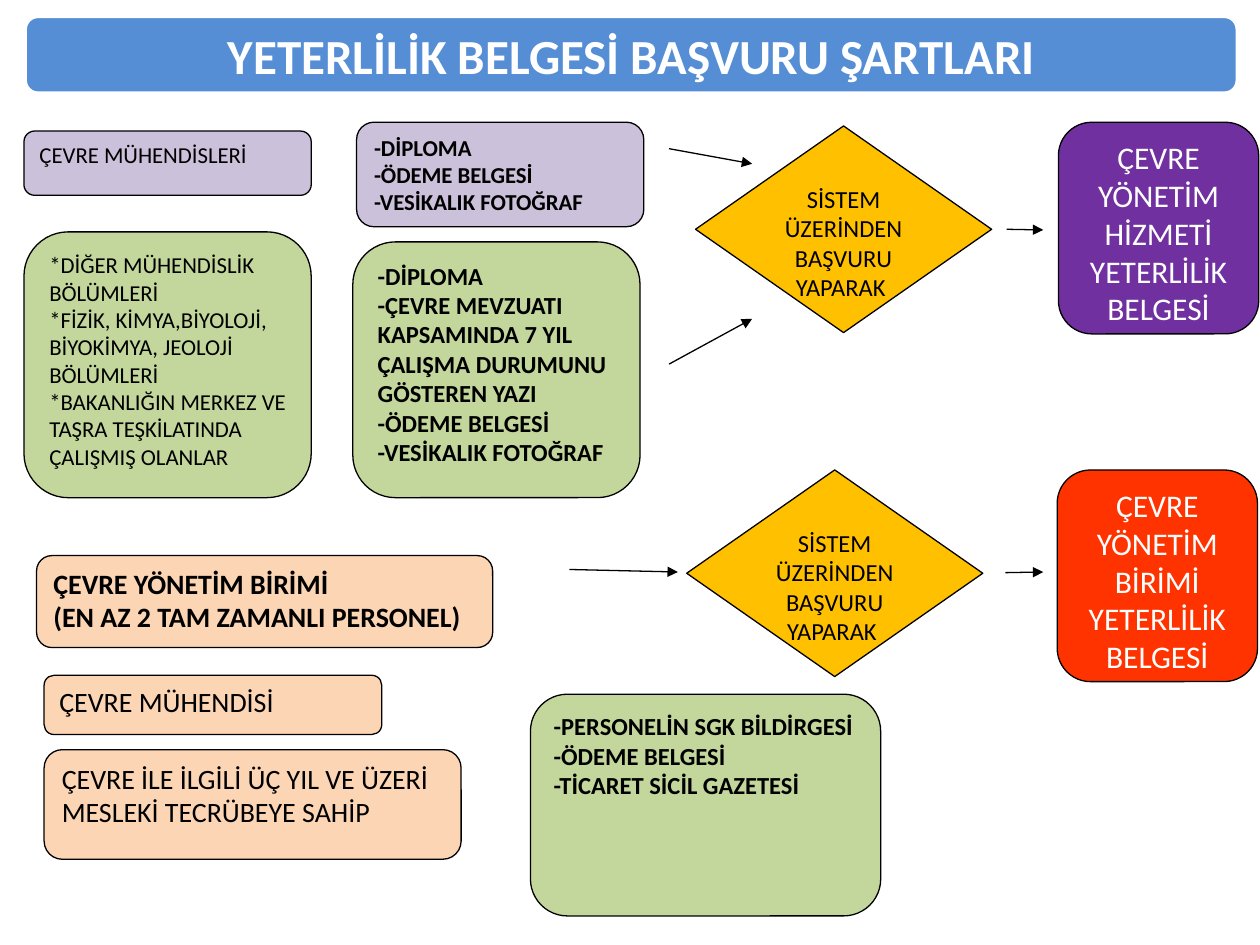
"""Build the flow slide of application requirements for a competence certificate."""
import pptx
import pptx.dml.color
import pptx.enum.shapes
import pptx.enum.text
import pptx.oxml
import pptx.oxml.ns
import pptx.util

COLOURS = {
    "blue": "558ED5", "purple": "7030A0", "lilac": "CCC1DA", "green": "C3D69B",
    "amber": "FFC000", "red": "FF3300", "peach": "FCD5B5",
    "black": "000000", "white": "FFFFFF",
}
SHAPES = pptx.enum.shapes.MSO_SHAPE
ALIGN = pptx.enum.text.PP_ALIGN
ANCHOR = pptx.enum.text.MSO_ANCHOR

deck = pptx.Presentation()
deck.slide_width = pptx.util.Inches(10)
deck.slide_height = pptx.util.Inches(7.5)
page = deck.slides.add_slide(deck.slide_layouts[6])
column = deck.slide_width / 100
row = deck.slide_height / 75


def colour(name):
    return pptx.dml.color.RGBColor.from_string(COLOURS[name])


def add_box(kind, place, fill, lines, size, bold=False, ink="black",
            align=ALIGN.LEFT, anchor=ANCHOR.TOP, border=("black", 0.75)):
    left, top, width, height = place
    box = page.shapes.add_shape(kind, round(left * column), round(top * row),
                                round(width * column), round(height * row))
    box.shadow.inherit = False
    box.fill.solid()
    box.fill.fore_color.rgb = colour(fill)
    box.line.color.rgb = colour(border[0])
    box.line.width = pptx.util.Pt(border[1])
    frame = box.text_frame
    frame.word_wrap = True
    frame.vertical_anchor = anchor
    font_format = {"name": "Calibri", "size": pptx.util.Pt(size), "bold": bold}
    for index, line in enumerate(lines):
        para = frame.add_paragraph() if index else frame.paragraphs[0]
        para.alignment = align
        span = para.add_run()
        span.text = line
        span.font.color.rgb = colour(ink)
        for attribute, value in font_format.items():
            setattr(span.font, attribute, value)


add_box(SHAPES.ROUNDED_RECTANGLE, (2, 1.3, 96.2, 6.1), "blue",
        ["YETERLİLİK BELGESİ BAŞVURU ŞARTLARI"], 28, True, "white",
        ALIGN.CENTER, ANCHOR.MIDDLE, ("white", 2))

requirements = [
    ((1.9, 10.4, 22.8, 5.1), "lilac", ["ÇEVRE MÜHENDİSLERİ"], 13, False),
    ((1.9, 18.4, 22.8, 21.1), "green",
     ["*DİĞER MÜHENDİSLİK BÖLÜMLERİ",
      "*FİZİK, KİMYA,BİYOLOJİ, BİYOKİMYA, JEOLOJİ BÖLÜMLERİ",
      "*BAKANLIĞIN MERKEZ VE TAŞRA TEŞKİLATINDA ÇALIŞMIŞ OLANLAR"], 13, False),
    ((28.3, 9.7, 22.8, 8.3), "lilac",
     ["-DİPLOMA", "-ÖDEME BELGESİ", "-VESİKALIK FOTOĞRAF"], 13, True),
    ((28, 19.2, 22.8, 20.3), "green",
     ["-DİPLOMA",
      "-ÇEVRE MEVZUATI KAPSAMINDA 7 YIL ÇALIŞMA DURUMUNU GÖSTEREN YAZI",
      "-ÖDEME BELGESİ", "-VESİKALIK FOTOĞRAF"], 14, True),
    ((2.9, 44.1, 36.2, 7.3), "peach",
     ["ÇEVRE YÖNETİM BİRİMİ", "(EN AZ 2 TAM ZAMANLI PERSONEL)"], 16, True),
    ((3.5, 53.6, 26.8, 4.7), "peach", ["ÇEVRE MÜHENDİSİ"], 16, False),
    ((3.5, 59.5, 33.1, 8.7), "peach",
     ["ÇEVRE İLE İLGİLİ ÜÇ YIL VE ÜZERİ MESLEKİ TECRÜBEYE SAHİP"], 16, False),
    ((42.1, 55.1, 27.8, 17.6), "green",
     ["-PERSONELİN SGK BİLDİRGESİ", "-ÖDEME BELGESİ",
      "-TİCARET SİCİL GAZETESİ"], 14, True),
]
for place, fill, lines, size, bold in requirements:
    add_box(SHAPES.ROUNDED_RECTANGLE, place, fill, lines, size, bold)

for left, top in [(55.2, 10), (54.5, 37.3)]:
    add_box(SHAPES.FLOWCHART_DECISION, (left, top, 23.5, 16.4), "amber",
            ["SİSTEM ÜZERİNDEN BAŞVURU YAPARAK "], 14, align=ALIGN.CENTER)

certificates = [(84, 9.7, "purple", "HİZMETİ"), (83.9, 37.3, "red", "BİRİMİ")]
for left, top, fill, subject in certificates:
    add_box(SHAPES.ROUNDED_RECTANGLE, (left, top, 15.9, 16.8), fill,
            [f"ÇEVRE YÖNETİM {subject} YETERLİLİK BELGESİ"], 18,
            ink="white", align=ALIGN.CENTER)

arrows = [
    (53.1, 28.9, 59.7, 25.3), (53.1, 11.8, 59.7, 13), (79.9, 18.2, 82.8, 18.25),
    (45.2, 45.2, 53.8, 45.4), (79.8, 45.45, 82.8, 45.4),
]
for start_x, start_y, end_x, end_y in arrows:
    arrow = page.shapes.add_connector(
        pptx.enum.shapes.MSO_CONNECTOR.STRAIGHT,
        round(start_x * column), round(start_y * row),
        round(end_x * column), round(end_y * row))
    arrow.line.color.rgb = colour("black")
    arrow.line.width = pptx.util.Pt(0.75)
    head = pptx.oxml.parse_xml(
        f'<a:tailEnd {pptx.oxml.ns.nsdecls("a")} type="triangle"/>')
    arrow.line._get_or_add_ln().append(head)
    arrow._element.spPr.append(
        pptx.oxml.parse_xml(f'<a:effectLst {pptx.oxml.ns.nsdecls("a")}/>'))

deck.save("out.pptx")
